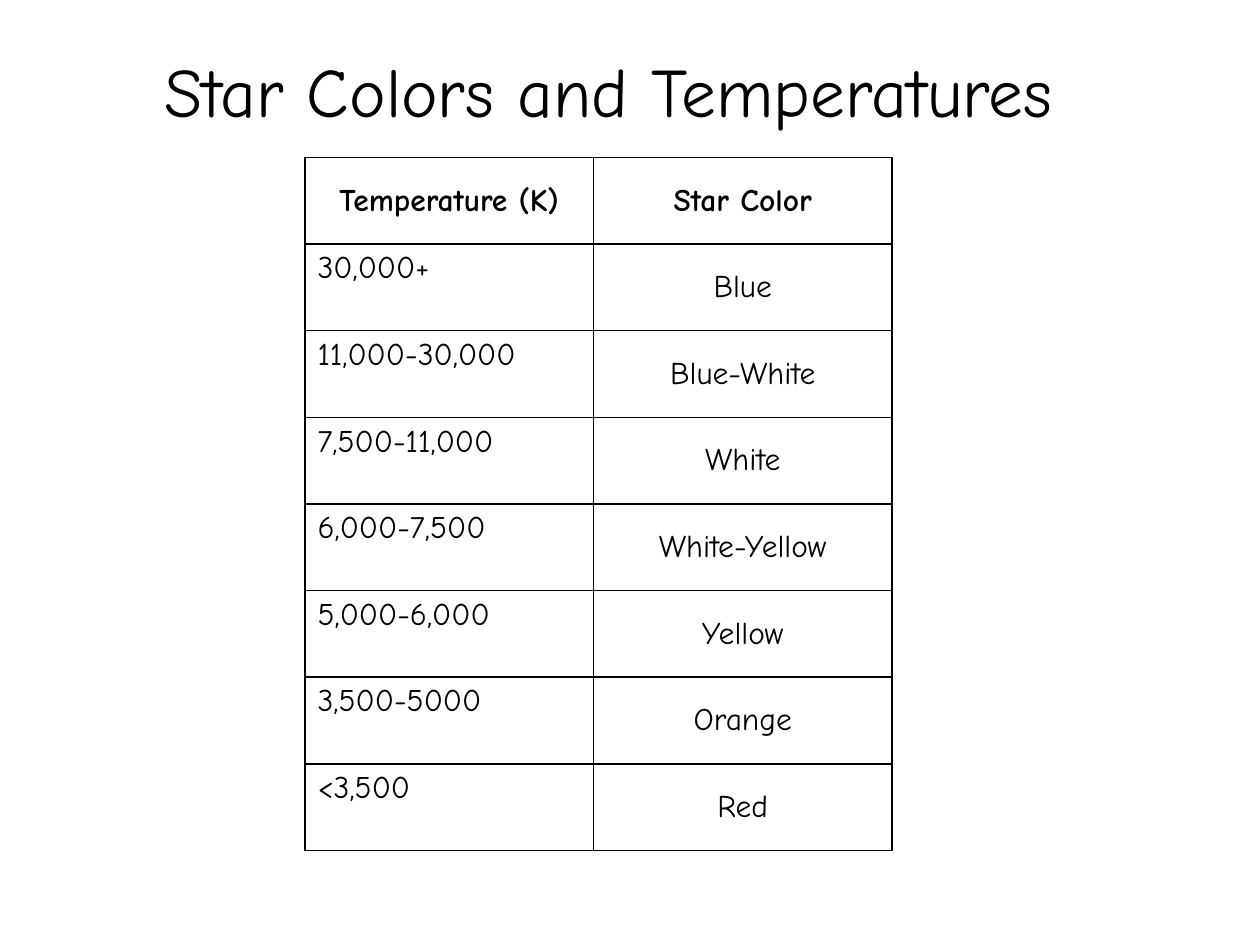
"""Build a slide with a table of star colors and temperatures."""
from lxml.etree import SubElement as Sub
from pptx import Presentation
from pptx.dml.color import RGBColor as RGB
from pptx.enum.text import MSO_ANCHOR as Anchor, PP_ALIGN as Align
from pptx.oxml.ns import qn
from pptx.util import Inches, Pt

TITLE = "Star Colors and Temperatures"
ROWS = [
    ("Temperature (K)", "Star Color"),
    ("30,000+", "Blue"),
    ("11,000-30,000", "Blue-White"),
    ("7,500-11,000", "White"),
    ("6,000-7,500", "White-Yellow"),
    ("5,000-6,000", "Yellow"),
    ("3,500-5000", "Orange"),
    ("<3,500", "Red"),
]
WIDTHS = (2.29, 2.37)
LEFT, TOP, HEIGHT = 2.42, 1.25, 5.5
COLORS = {"ink": "000000"}
FONT = "Comic Neue"


def style(para, size, align, bold=False):
    para.alignment = align
    for run in para.runs:
        font = run.font
        font.name, font.size, font.bold = FONT, Pt(size), bold
        font.color.rgb = RGB.from_string(COLORS["ink"])


def border(cell):
    props = cell._tc.get_or_add_tcPr()
    for i, side in enumerate(("lnL", "lnR", "lnT", "lnB")):
        line = props.makeelement(qn(f"a:{side}"), {"w": str(Pt(1))})
        fill = Sub(line, qn("a:solidFill"))
        Sub(fill, qn("a:srgbClr"), val=COLORS["ink"])
        props.insert(i, line)


def add_title(slide):
    box = slide.shapes.add_textbox(*map(Inches, (0.58, 0.25, 8.5, 0.92)))
    frame = box.text_frame
    frame.word_wrap = True
    frame.vertical_anchor = Anchor.MIDDLE
    frame.text = TITLE
    style(frame.paragraphs[0], 39.6, Align.CENTER)


def add_stars(slide):
    place = map(Inches, (LEFT, TOP, sum(WIDTHS), HEIGHT))
    table = slide.shapes.add_table(len(ROWS), len(WIDTHS), *place).table
    table.horz_banding = False
    for col, width in zip(table.columns, WIDTHS):
        col.width = Inches(width)
    for r, row in enumerate(ROWS):
        table.rows[r].height = Inches(HEIGHT / len(ROWS))
        for c, text in enumerate(row):
            cell = table.cell(r, c)
            mid = r == 0 or c == 1
            cell.text_frame.text = text
            cell.fill.background()
            cell.vertical_anchor = Anchor.MIDDLE if mid else Anchor.TOP
            align = Align.CENTER if mid else Align.LEFT
            style(cell.text_frame.paragraphs[0], 18, align, r == 0)
            border(cell)


def main():
    deck = Presentation()
    deck.slide_width, deck.slide_height = Inches(10), Inches(7.5)
    slide = deck.slides.add_slide(deck.slide_layouts[6])
    add_title(slide)
    add_stars(slide)
    deck.save("out.pptx")


if __name__ == "__main__":
    main()
